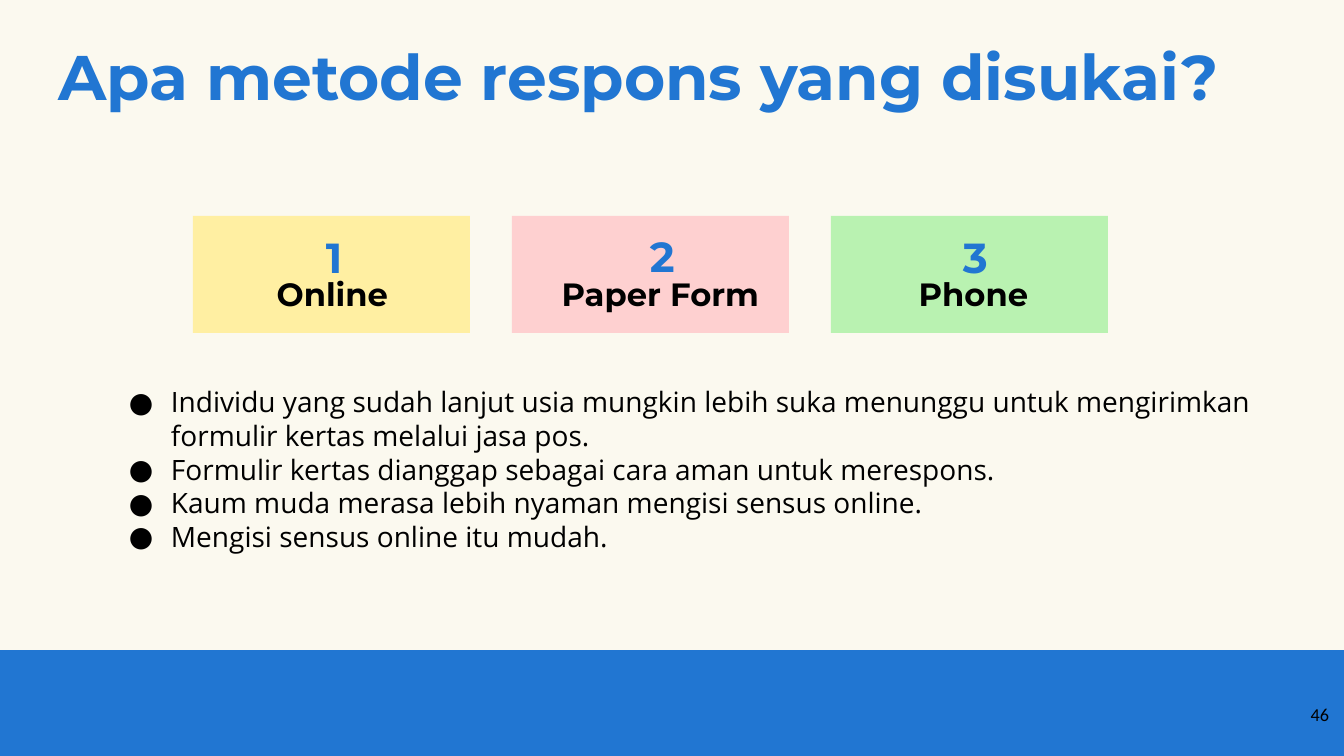
import pptx
import pptx.util
import pptx.dml.color
import pptx.enum.shapes
import pptx.enum.text
import lxml.etree

PX = 914400 / 100.8
BLUE, BLACK = "2176D2", "000000"
ALIGN = pptx.enum.text.PP_ALIGN
HEAD = "Montserrat"


def color(code):
    return pptx.dml.color.RGBColor.from_string(code)


def write(shape, lines, size, font, code, bold=False, align=ALIGN.LEFT):
    frame = shape.text_frame
    frame.word_wrap = True
    frame.auto_size = pptx.enum.text.MSO_AUTO_SIZE.NONE
    frame.vertical_anchor = pptx.enum.text.MSO_ANCHOR.TOP
    for i, line in enumerate(lines):
        par = frame.paragraphs[0] if i == 0 else frame.add_paragraph()
        par.alignment = align
        run = par.add_run()
        run.text = line
        run.font.size = pptx.util.Pt(size)
        run.font.name = font
        run.font.bold = bold
        run.font.color.rgb = color(code)
    return frame


deck = pptx.Presentation()
deck.slide_width, deck.slide_height = round(1344 * PX), round(756 * PX)
slide = deck.slides.add_slide(deck.slide_layouts[5])
slide.background.fill.solid()
slide.background.fill.fore_color.rgb = color("FBF9EF")
shapes = slide.shapes

# Title
title = shapes.title
title.left, title.top, title.width, title.height = [
    round(n * PX) for n in (48, 32, 1263, 147)]
write(title, ["Apa metode respons yang disukai?"], 45, HEAD, BLUE, True)

# Bottom band and three cards
blocks = [(0, 650, 1344, 106, BLUE)]
for i, code in enumerate(["FFEFA2", "FED0D0", "B9F2B1"]):
    blocks.append((193 + 319 * i, 216, 277, 117, code))
for *place, code in blocks:
    block = shapes.add_shape(pptx.enum.shapes.MSO_SHAPE.RECTANGLE,
                             *[round(n * PX) for n in place])
    block.shadow.inherit = False
    block.fill.solid()
    block.fill.fore_color.rgb = color(code)
    block.line.fill.background()

# Card labels, card numbers and page number
texts = [("46", (1258, 698, 81, 57), 13, "Calibri", BLACK, False, ALIGN.RIGHT)]
cards = [("Online", 153, 316, 227), ("Paper Form", 481, 640, 226),
         ("Phone", 794, 953, 227)]
for i, (name, left, mark, top) in enumerate(cards, 1):
    texts.append((name, (left, 269, 359, 64), 23, HEAD, BLACK, True,
                  ALIGN.CENTER))
    texts.append((str(i), (mark, top, 52, 61), 30, HEAD, BLUE, True,
                  ALIGN.LEFT))
for words, place, *style in texts:
    box = shapes.add_textbox(*[round(n * PX) for n in place])
    write(box, [words], *style)

# Bullet list
box = shapes.add_textbox(*[round(n * PX) for n in (111, 380, 1172, 200)])
frame = write(box, [
    "Individu yang sudah lanjut usia mungkin lebih suka menunggu untuk "
    "mengirimkan formulir kertas melalui jasa pos.",
    "Formulir kertas dianggap sebagai cara aman untuk merespons.",
    "Kaum muda merasa lebih nyaman mengisi sensus online.",
    "Mengisi sensus online itu mudah.",
], 20, "Open Sans", BLACK)
for par in frame.paragraphs:
    props = par._p.get_or_add_pPr()
    props.set("marL", str(round(50 * PX)))
    props.set("indent", str(round(-42 * PX)))
    space = "{http://schemas.openxmlformats.org/drawingml/2006/main}"
    tint = lxml.etree.SubElement(props, space + "buClr")
    lxml.etree.SubElement(tint, space + "srgbClr", val=BLACK)
    lxml.etree.SubElement(props, space + "buFont", typeface="Open Sans")
    lxml.etree.SubElement(props, space + "buChar", char="●")

deck.save("out.pptx")
